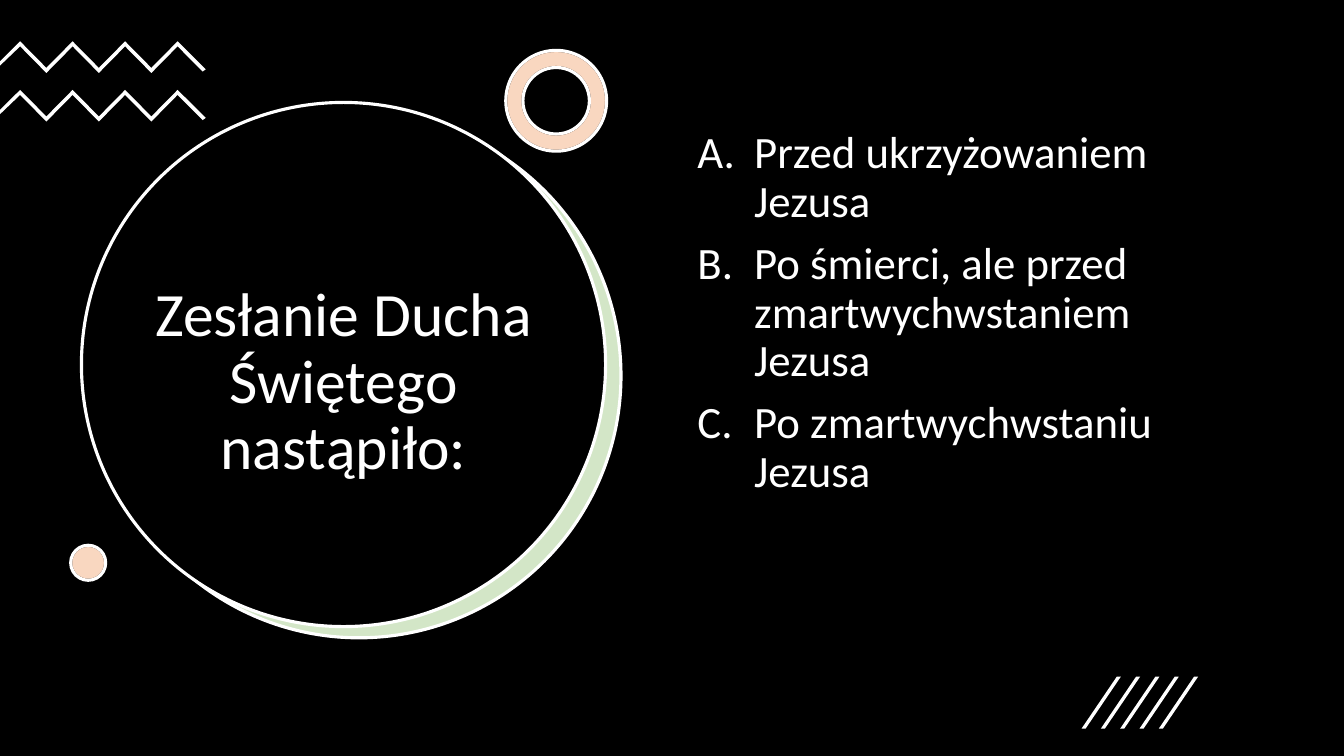
from lxml.etree import SubElement
from pptx import Presentation
from pptx.dml.color import RGBColor
from pptx.enum.shapes import MSO_SHAPE as Shape
from pptx.enum.text import MSO_ANCHOR as Anchor, MSO_AUTO_SIZE as AutoSize, PP_ALIGN as Align
from pptx.oxml.ns import qn
from pptx.util import Pt

BLACK = RGBColor(0x00, 0x00, 0x00)
WHITE = RGBColor(0xFF, 0xFF, 0xFF)
GREEN = RGBColor(0x70, 0xAD, 0x47)
ORANGE = RGBColor(0xED, 0x7D, 0x31)
FONT = "Calibri"
WIDTH, HEIGHT = 960, 540

QUESTION = "Zesłanie Ducha Świętego nastąpiło:"
ANSWERS = [
    "Przed ukrzyżowaniem Jezusa",
    "Po śmierci, ale przed zmartwychwstaniem Jezusa",
    "Po zmartwychwstaniu Jezusa",
]


def paint(shape, fill, line=None, opacity=100):
    shape.shadow.inherit = False
    shape.fill.solid()
    shape.fill.fore_color.rgb = fill
    if opacity < 100:
        color = shape.fill._xPr.find(qn("a:solidFill"))[0]
        SubElement(color, qn("a:alpha"), val=str(opacity * 1000))
    if line is None:
        shape.line.fill.background()
    else:
        shape.line.color.rgb = line
        shape.line.width = Pt(2.25)


def add_preset(slide, kind, box, fill, line=None, opacity=100):
    shape = slide.shapes.add_shape(kind, *map(Pt, box))
    paint(shape, fill, line, opacity)
    return shape


def add_outline(group, points):
    points = [(Pt(x), Pt(y)) for x, y in points]
    builder = group.shapes.build_freeform(*points[0])
    builder.add_line_segments(points[1:], close=True)
    paint(builder.convert_to_shape(), WHITE)


def place_text(placeholder, box, anchor):
    """Move a placeholder to the box and in front of the artwork."""
    placeholder.left, placeholder.top, placeholder.width, placeholder.height = map(Pt, box)
    placeholder.element.getparent().append(placeholder.element)
    frame = placeholder.text_frame
    frame.word_wrap = True
    frame.auto_size = AutoSize.NONE
    frame.vertical_anchor = anchor
    return frame


def format_paragraph(paragraph, size):
    paragraph.line_spacing = 0.9
    paragraph.font.size = Pt(size)
    paragraph.font.name = FONT
    paragraph.font.color.rgb = WHITE


def add_question(slide, box):
    left, top, size = box
    # Layered discs: white base, green crescent, black face
    add_preset(slide, Shape.OVAL, (left + 11.5, top + 8.5, size, size), WHITE)
    add_preset(slide, Shape.OVAL, (left + 11, top + 8, size, size), GREEN, WHITE, 30)
    add_preset(slide, Shape.OVAL, (left, top, size, size), BLACK, WHITE)
    # Question text
    frame = place_text(slide.shapes.title, (left + 28.5, top + 74, 317.5, 253.5), Anchor.MIDDLE)
    frame.text = QUESTION
    paragraph = frame.paragraphs[0]
    paragraph.alignment = Align.CENTER
    format_paragraph(paragraph, 44)


def add_zigzags(slide, box):
    left, top, step, rise, gap = box
    group = slide.shapes.add_group_shape()
    for row in range(2):
        y = top + row * gap
        upper = [(left + 14.4 + step * i, y + rise * (i % 2)) for i in range(7)]
        lower = [(px, py + 3.6) for px, py in reversed(upper)]
        tip = [(left + 147, y + 20), (left + 144.8, y + 21.6)]
        edge = [(left, y + 17.4), (left, y + 14.4)]
        add_outline(group, upper + tip + lower + edge)


def add_peach(slide, kind, box):
    """Black-edged white base under a translucent orange shape."""
    for fill, line, opacity in ((WHITE, BLACK, 100), (ORANGE, WHITE, 30)):
        shape = add_preset(slide, kind, box, fill, line, opacity)
        if kind == Shape.DONUT:
            shape.adjustments[0] = 0.17


def add_answers(slide, box):
    frame = place_text(slide.placeholders[1], box, Anchor.TOP)
    frame.text = "\n".join(ANSWERS)
    for paragraph in frame.paragraphs:
        # Lettered list with a hanging indent
        properties = paragraph._p.get_or_add_pPr()
        properties.set("marL", str(Pt(40.5)))
        properties.set("indent", str(-Pt(40.5)))
        SubElement(properties, qn("a:buFont"), typeface=FONT)
        SubElement(properties, qn("a:buAutoNum"), type="alphaUcPeriod")
        paragraph.space_before = Pt(10)
        format_paragraph(paragraph, 32)


def add_slashes(slide, box):
    left, top, width, height = box
    group = slide.shapes.add_group_shape()
    for i in range(5):
        x = left + 13.8 * i
        add_outline(group, [(x + 2.9, top + height), (x, top + height),
                            (x + width - 2.9, top), (x + width, top)])


def add_quiz_slide(presentation):
    slide = presentation.slides.add_slide(presentation.slide_layouts[1])
    add_preset(slide, Shape.RECTANGLE, (0, 0, WIDTH, HEIGHT), BLACK)
    add_question(slide, (58.2, 73.2, 374.4))
    add_zigzags(slide, (0, 29.5, 18.75, 19, 34.7))
    add_peach(slide, Shape.DONUT, (361.3, 36, 72, 72))
    add_peach(slide, Shape.OVAL, (50.5, 389.5, 25, 25))
    add_answers(slide, (491, 89.3, 411, 342.7))
    add_slashes(slide, (772.6, 483.4, 28, 37))


def main():
    presentation = Presentation()
    presentation.slide_width, presentation.slide_height = Pt(WIDTH), Pt(HEIGHT)
    add_quiz_slide(presentation)
    presentation.save("out.pptx")


if __name__ == "__main__":
    main()
